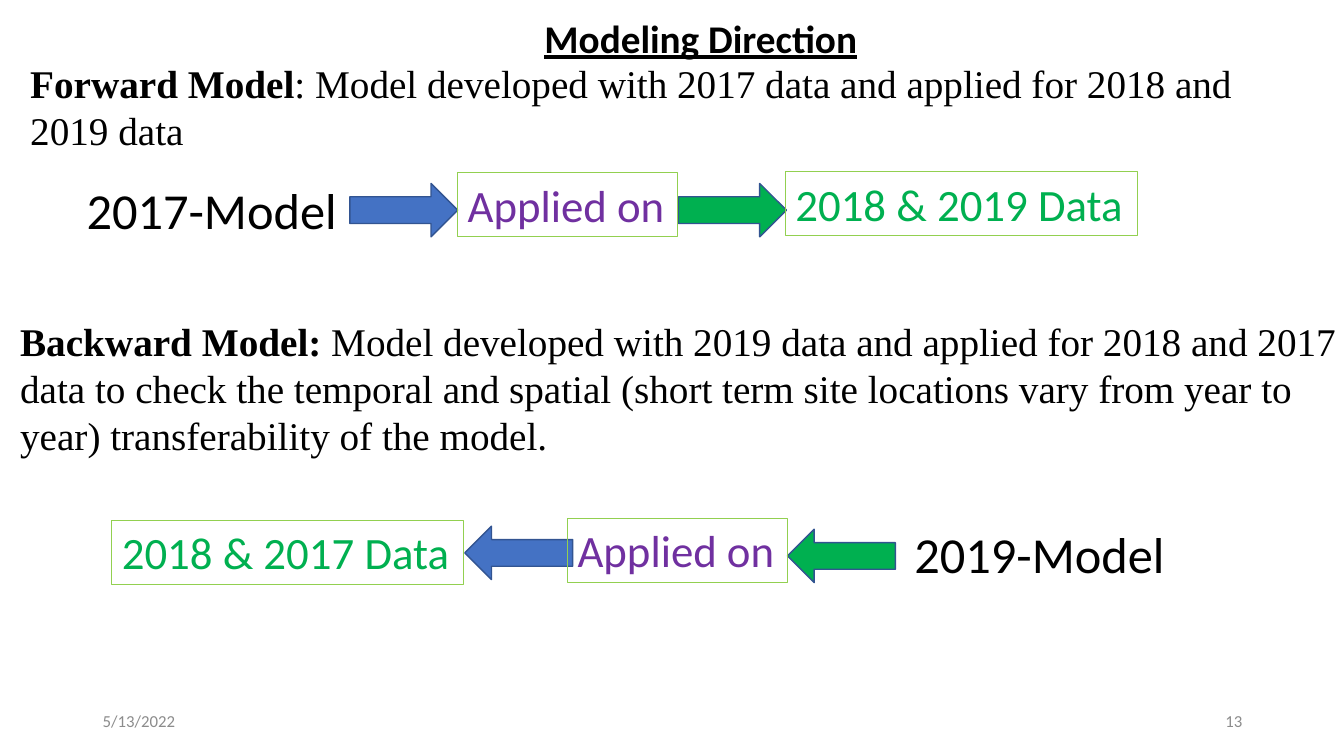
import pptx
import pptx.util
import pptx.dml.color
import pptx.enum.shapes
import pptx.enum.text
from dataclasses import dataclass
from pptx.util import Inches

ALIGN = pptx.enum.text.PP_ALIGN
ANCHOR = pptx.enum.text.MSO_ANCHOR
SHAPE = pptx.enum.shapes.MSO_SHAPE


@dataclass(frozen=True)
class Theme:
    sans: str = "Calibri"
    serif: str = "Times New Roman"
    black: str = "000000"
    gray: str = "8C8C8C"
    blue: str = "4472C4"
    navy: str = "325491"
    green: str = "00B050"
    lime: str = "92D050"
    purple: str = "7030A0"
    footer_size: int = 12
    body_size: int = 28
    step_size: int = 32
    model_size: int = 36


theme = Theme()


def rgb(value):
    return pptx.dml.color.RGBColor.from_string(value)


def write(box, spans, font, size, color, wrap=False, anchor=ANCHOR.TOP, align=ALIGN.LEFT):
    """Fill a box with one paragraph made of (text, bold) spans."""
    frame = box.text_frame
    frame.word_wrap = wrap
    frame.auto_size = pptx.enum.text.MSO_AUTO_SIZE.NONE
    frame.vertical_anchor = anchor
    para = frame.paragraphs[0]
    para.alignment = align
    para.space_before = pptx.util.Pt(0)
    para.font.name = font
    para.font.size = pptx.util.Pt(size)
    para.font.color.rgb = rgb(color)
    for text, bold in spans:
        span = para.add_run()
        span.text = text
        span.font.bold = bold
    return para


deck = pptx.Presentation()
deck.slide_width, deck.slide_height = Inches(13.33), Inches(7.5)
page = deck.slides.add_slide(deck.slide_layouts.get_by_name("Two Content"))
title, forward, backward = page.placeholders

# Title
title.left, title.top, title.width, title.height = map(Inches, (5.3, 0.09, 3.34, 0.57))
para = write(title, [("Modeling Direction", True)], theme.sans, theme.body_size, theme.black)
para.font.underline = True

# Definitions of the two models
definitions = [
    (forward, (0.2, 0.54, 12.9, 1.04), "Forward Model",
     ": Model developed with 2017 data and applied for 2018 and 2019 data"),
    (backward, (0.1, 3.1, 13.35, 1.5), "Backward Model: ",
     "Model developed with 2019 data and applied for 2018 and 2017 data to check the temporal "
     "and spatial (short term site locations vary from year to year) transferability of the model."),
]
for box, place, term, meaning in definitions:
    box.left, box.top, box.width, box.height = map(Inches, place)
    para = write(box, [(term, True), (meaning, False)],
                 theme.serif, theme.body_size, theme.black, wrap=True)
    properties = para._p.get_or_add_pPr()
    properties.set("marL", "0")
    properties.set("indent", "0")
    no_bullet = pptx.oxml.parse_xml(
        '<a:buNone xmlns:a="http://schemas.openxmlformats.org/drawingml/2006/main"/>')
    properties.insert_element_before(no_bullet, "a:tabLst", "a:defRPr", "a:extLst")

# Flows: model label, arrows (left, top, fill), framed steps (left, top, width, text, color)
flows = [
    (0, ("2017-Model", 0.76, 1.73),
     [(3.47, 1.82, theme.blue), (6.73, 1.82, theme.green)],
     [(4.54, 1.71, 2.18, "Applied on", theme.purple),
      (7.79, 1.7, 3.49, "2018 & 2019 Data", theme.green)]),
    (180, ("2019-Model", 8.97, 5.14),
     [(4.61, 5.22, theme.blue), (7.81, 5.25, theme.green)],
     [(5.63, 5.14, 2.18, "Applied on", theme.purple),
      (1.11, 5.16, 3.49, "2018 & 2017 Data", theme.green)]),
]
for rotation, (model, left, top), arrows, steps in flows:
    flow = page.shapes.add_group_shape()
    label = flow.shapes.add_textbox(Inches(left), Inches(top), Inches(2.71), Inches(0.71))
    write(label, [(model, False)], theme.sans, theme.model_size, theme.black)

    for left, top, fill in arrows:
        arrow = flow.shapes.add_shape(
            SHAPE.RIGHT_ARROW, Inches(left), Inches(top), Inches(1.07), Inches(0.53))
        arrow.rotation = rotation
        arrow.shadow.inherit = False
        arrow.fill.solid()
        arrow.fill.fore_color.rgb = rgb(fill)
        arrow.line.color.rgb = rgb(theme.navy)
        arrow.line.width = pptx.util.Pt(1)

    for left, top, width, text, color in steps:
        step = flow.shapes.add_textbox(Inches(left), Inches(top), Inches(width), Inches(0.64))
        step.line.color.rgb = rgb(theme.lime)
        step.line.width = pptx.util.Pt(0.75)
        write(step, [(text, False)], theme.sans, theme.step_size, color)

# Footer
for left, text, align in [(0.92, "5/13/2022", ALIGN.LEFT), (9.42, "13", ALIGN.RIGHT)]:
    footer = page.shapes.add_textbox(Inches(left), Inches(6.95), Inches(3), Inches(0.4))
    write(footer, [(text, False)], theme.sans, theme.footer_size, theme.gray,
          wrap=True, anchor=ANCHOR.MIDDLE, align=align)

deck.save("out.pptx")
